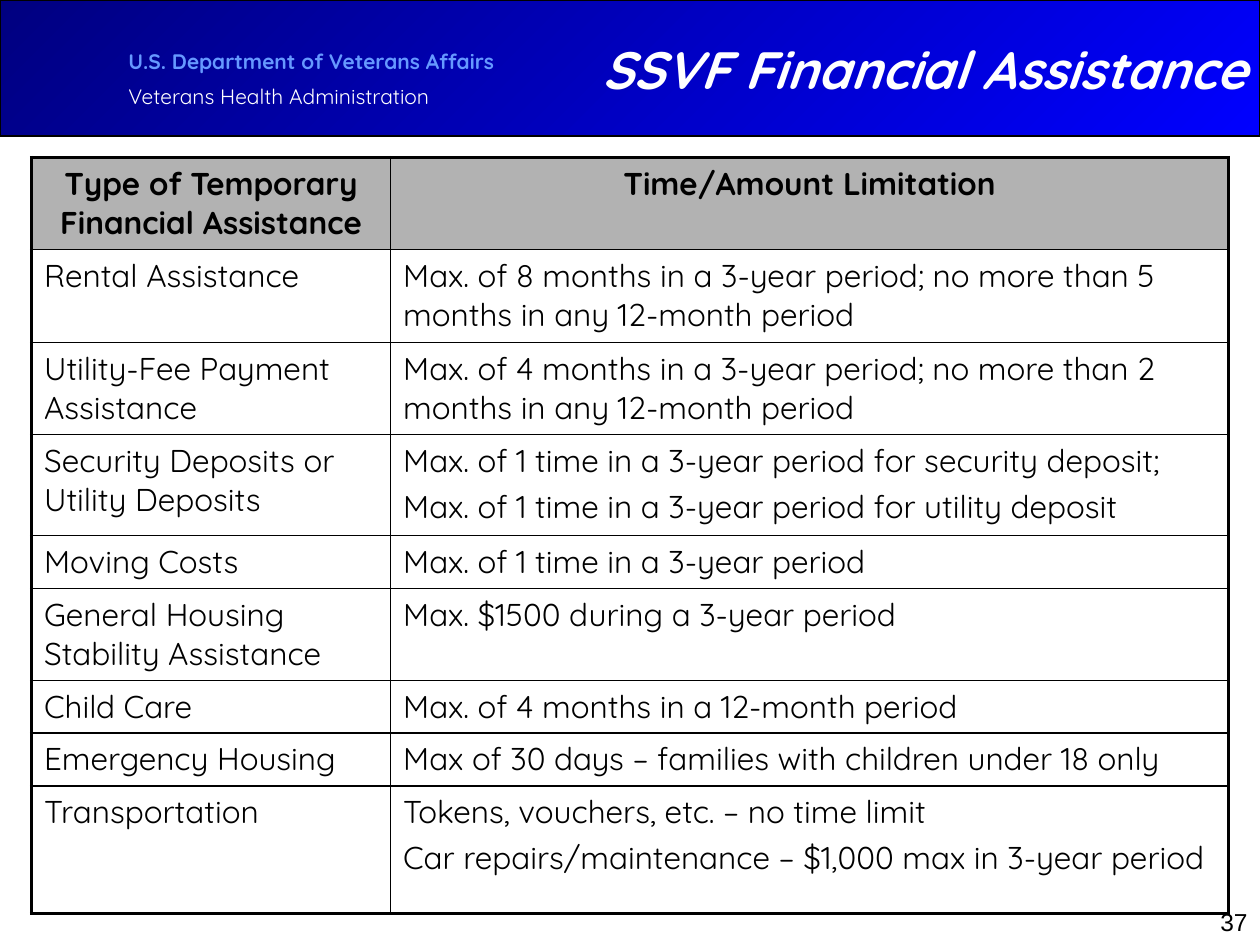
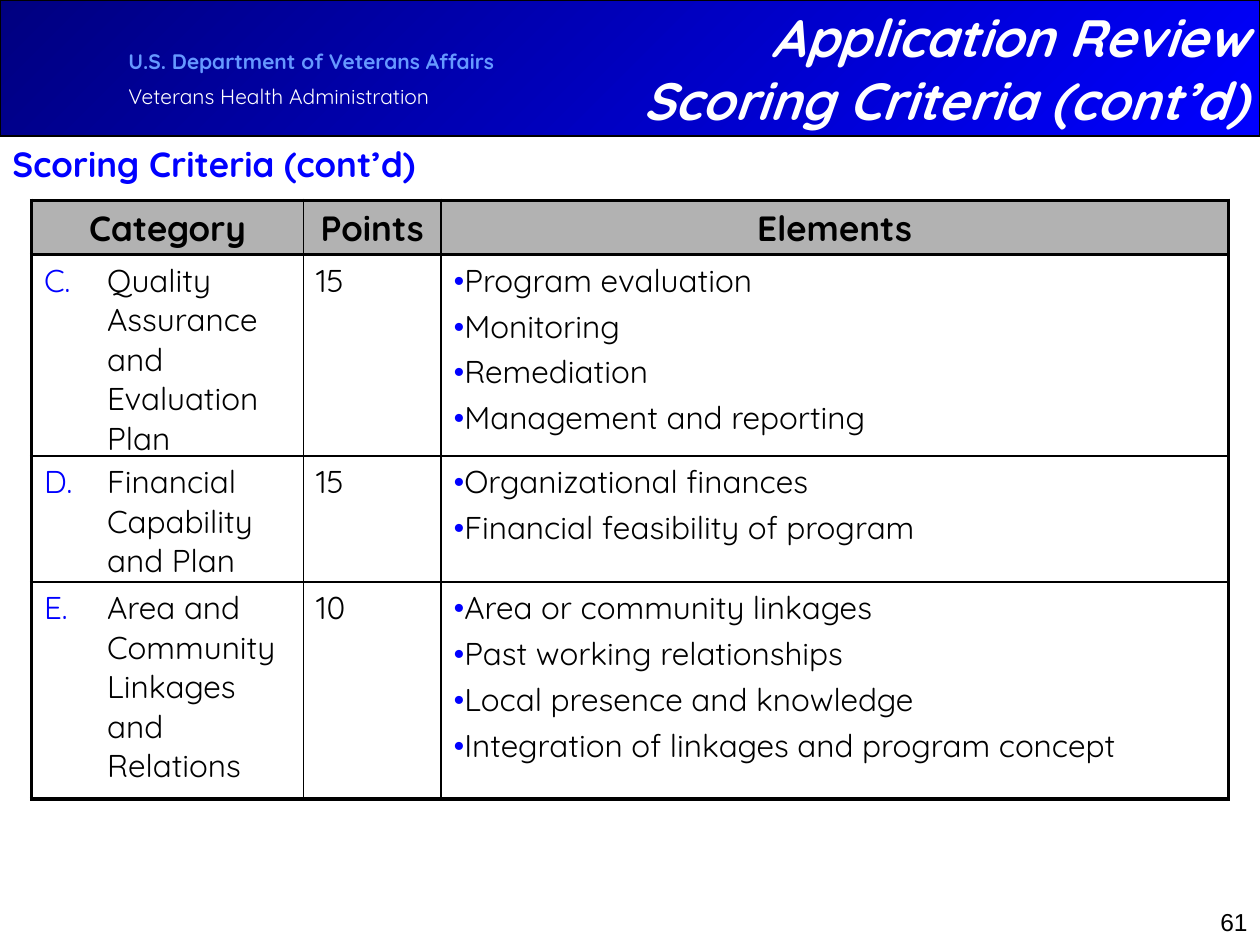
from lxml import etree
from pptx import Presentation
from pptx.dml.color import RGBColor
from pptx.enum.shapes import MSO_SHAPE
from pptx.enum.text import MSO_ANCHOR, PP_ALIGN
from pptx.oxml.ns import qn
from pptx.util import Inches, Pt

BAND_DARK = RGBColor(0x00, 0x00, 0x80)
BLUE = RGBColor(0x00, 0x00, 0xFF)
LIGHT_BLUE = RGBColor(0x66, 0x99, 0xFF)
WHITE = RGBColor(0xFF, 0xFF, 0xFF)
BLACK = RGBColor(0x00, 0x00, 0x00)
HEADER_GRAY = RGBColor(0xB2, 0xB2, 0xB2)

BODY_FONT = "Quicksand"
NUMBER_FONT = "Arial"
BAND_HEIGHT = 1.08
OUTER_LINE = 2.25
COLUMN_LINE = 1

ASSISTANCE = [
    ("Type of Temporary Financial Assistance", "Time/Amount Limitation"),
    ("Rental Assistance",
     "Max. of 8 months in a 3-year period; no more than 5 months in any 12-month period"),
    ("Utility-Fee Payment Assistance",
     "Max. of 4 months in a 3-year period; no more than 2 months in any 12-month period"),
    ("Security Deposits or Utility Deposits",
     "Max. of 1 time in a 3-year period for security deposit;\n"
     "Max. of 1 time in a 3-year period for utility deposit"),
    ("Moving Costs", "Max. of 1 time in a 3-year period"),
    ("General Housing Stability Assistance", "Max. $1500 during a 3-year period"),
    ("Child Care", "Max. of 4 months in a 12-month period"),
    ("Emergency Housing", "Max of 30 days – families with children under 18 only"),
    ("Transportation",
     "Tokens, vouchers, etc. – no time limit\n"
     "Car repairs/maintenance – $1,000 max in 3-year period"),
]

CRITERIA = [
    ("Category", "Points", "Elements"),
    ("Quality Assurance and Evaluation Plan", "15",
     "Program evaluation\nMonitoring\nRemediation\nManagement and reporting"),
    ("Financial Capability and Plan", "15",
     "Organizational finances\nFinancial feasibility of program"),
    ("Area and Community Linkages and Relations", "10",
     "Area or community linkages\nPast working relationships\n"
     "Local presence and knowledge\nIntegration of linkages and program concept"),
]
FIRST_LETTER = 3  # the list starts at C


def write(tf, text, size, color=BLACK, font=BODY_FONT, bold=False, italic=False,
          align=PP_ALIGN.LEFT, gap=0):
    """Fill a text frame, one paragraph per line, with gap points between them."""
    tf.word_wrap = True
    tf.text = text
    for i, p in enumerate(tf.paragraphs):
        p.alignment = align
        if i and gap:
            p.space_before = Pt(gap)
        for r in p.runs:
            r.font.name, r.font.size = font, Pt(size)
            r.font.bold, r.font.italic = bold, italic
            r.font.color.rgb = color


def add_text(slide, box, text, size, **style):
    tf = slide.shapes.add_textbox(*map(Inches, box)).text_frame
    write(tf, text, size, **style)
    return tf


def add_bullet(p, kind, indent=0, **attributes):
    """Give a paragraph a blue buChar or buAutoNum marker."""
    pPr = p._p.get_or_add_pPr()
    pPr.set("marL", str(Inches(indent)))
    pPr.set("indent", str(-Inches(indent)))
    color = etree.SubElement(pPr, qn("a:buClr"))
    etree.SubElement(color, qn("a:srgbClr"), val=str(BLUE))
    etree.SubElement(pPr, qn("a:buFont"), typeface=BODY_FONT)
    etree.SubElement(pPr, qn(f"a:{kind}"), attributes)


def set_borders(cell, left, right, top, bottom):
    tcPr = cell._tc.get_or_add_tcPr()
    for side, width in zip("LRTB", (left, right, top, bottom)):
        ln = etree.SubElement(tcPr, qn(f"a:ln{side}"), w=str(Pt(width)))
        fill = etree.SubElement(ln, qn("a:solidFill"))
        etree.SubElement(fill, qn("a:srgbClr"), val=str(BLACK))


def add_grid(slide, left, top, widths, heights, rows, header_size, row_line):
    """Add a table with a gray header row and a heavy outer frame."""
    box = (left, top, sum(widths), sum(heights))
    table = slide.shapes.add_table(len(rows), len(widths), *map(Inches, box)).table
    table.first_row = table.horz_banding = False
    for column, width in zip(table.columns, widths):
        column.width = Inches(width)
    last_row, last_col = len(rows) - 1, len(widths) - 1
    for r, (height, texts) in enumerate(zip(heights, rows)):
        table.rows[r].height = Inches(height)
        for c, text in enumerate(texts):
            cell = table.cell(r, c)
            set_borders(cell,
                        COLUMN_LINE if c else OUTER_LINE,
                        OUTER_LINE if c == last_col else COLUMN_LINE,
                        row_line if r else OUTER_LINE,
                        OUTER_LINE if r == last_row else row_line)
            if r:
                cell.fill.background()
                write(cell.text_frame, text, 18, gap=3.6)
            else:
                cell.fill.solid()
                cell.fill.fore_color.rgb = HEADER_GRAY
                write(cell.text_frame, text, header_size, bold=True,
                      align=PP_ALIGN.CENTER)
    return table


def add_band(slide):
    band = slide.shapes.add_shape(MSO_SHAPE.RECTANGLE, 0, 0, Inches(10),
                                  Inches(BAND_HEIGHT))
    band.shadow.inherit = False
    band.fill.gradient()
    band.fill.gradient_angle = 315
    for stop, color in zip(band.fill.gradient_stops, (BAND_DARK, BLUE)):
        stop.color.rgb = color
    band.line.color.rgb = BLACK
    band.line.width = Pt(0.75)
    tf = add_text(slide, (0.92, 0.34, 4, 0.6),
                  "U.S. Department of Veterans Affairs\nVeterans Health Administration",
                  12, color=WHITE, gap=5.5)
    department = tf.paragraphs[0].runs[0].font
    department.bold = True
    department.color.rgb = LIGHT_BLUE


def add_base_slide(prs, title, number):
    """Add a slide with the band, title and page number."""
    slide = prs.slides.add_slide(prs.slide_layouts[6])
    add_band(slide)
    add_text(slide, (7.92, 7.15, 2.08, 0.5), str(number), 14, font=NUMBER_FONT,
             align=PP_ALIGN.RIGHT)
    tf = add_text(slide, (4, 0, 6, BAND_HEIGHT), title, 30, color=WHITE, bold=True,
                  italic=True, align=PP_ALIGN.RIGHT)
    tf.vertical_anchor = MSO_ANCHOR.MIDDLE
    return slide


def add_assistance_slide(prs):
    slide = add_base_slide(prs, "SSVF Financial Assistance", 37)
    heights = [0.73, 0.74, 0.73, 0.8, 0.42, 0.73, 0.42, 0.42, 1.01]
    add_grid(slide, 0.25, 1.25, [2.85, 6.65], heights, ASSISTANCE,
             header_size=18, row_line=1)


def add_criteria_slide(prs):
    slide = add_base_slide(prs, "Application Review\nScoring Criteria (cont’d)", 61)
    add_text(slide, (0, BAND_HEIGHT, 9.75, 0.5), "Scoring Criteria (cont’d)", 20,
             color=BLUE, bold=True)
    table = add_grid(slide, 0.25, 1.59, [2.16, 1.09, 6.25], [0.43, 1.6, 1, 1.72],
                     CRITERIA, header_size=20, row_line=1.5)
    for cell in table.iter_cells():
        cell.margin_bottom = 0
    for r in range(1, len(CRITERIA)):
        category, elements = table.cell(r, 0), table.cell(r, 2)
        add_bullet(category.text_frame.paragraphs[0], "buAutoNum", indent=0.5,
                   type="alphaUcPeriod", startAt=str(FIRST_LETTER + r - 1))
        for p in elements.text_frame.paragraphs:
            add_bullet(p, "buChar", char="•")


def main():
    prs = Presentation()
    prs.slide_width, prs.slide_height = Inches(10), Inches(7.5)
    add_assistance_slide(prs)
    add_criteria_slide(prs)
    prs.save("out.pptx")


if __name__ == "__main__":
    main()
